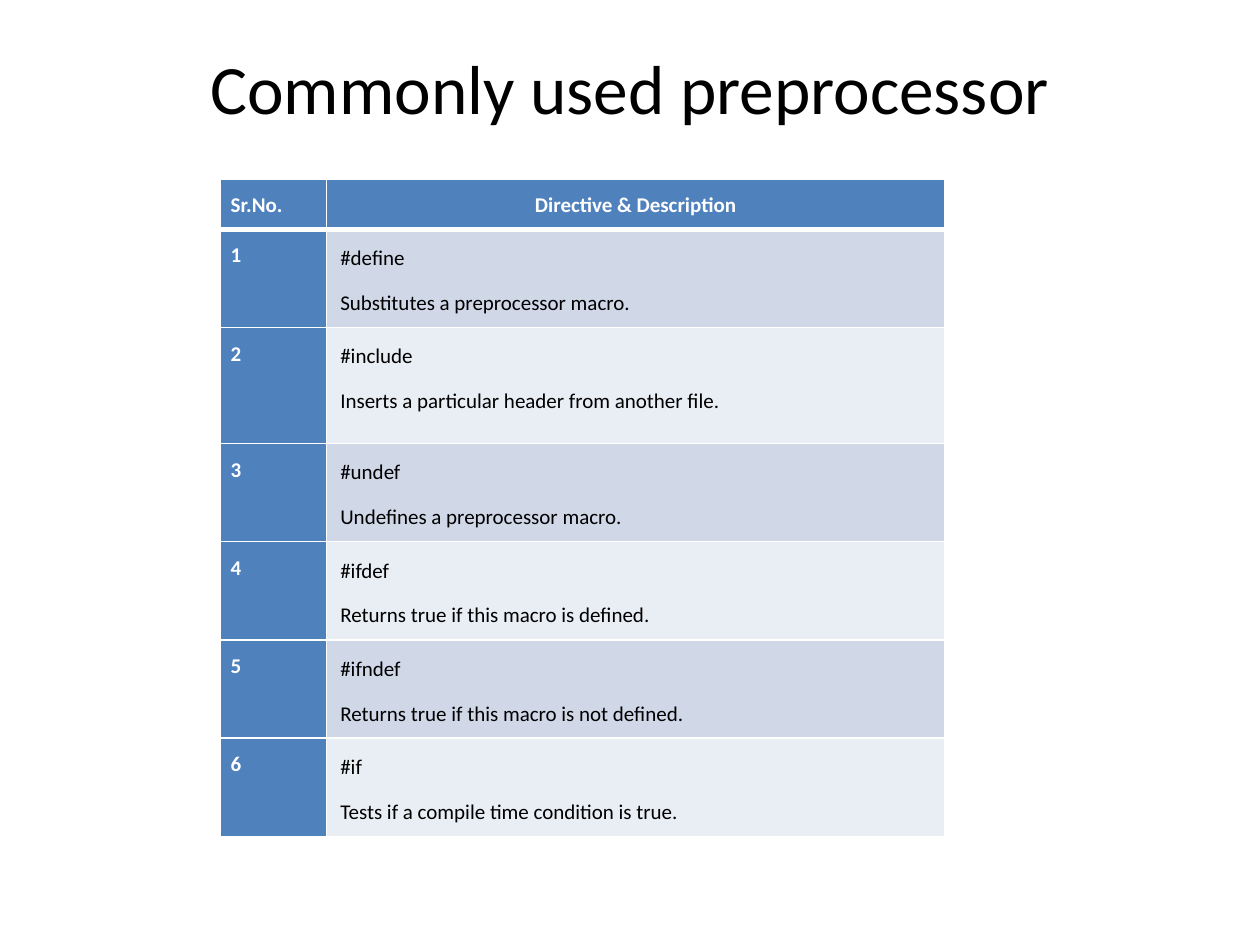
from typing import NamedTuple

from lxml.etree import SubElement
from pptx import Presentation
from pptx.dml.color import RGBColor
from pptx.enum.text import MSO_ANCHOR, PP_ALIGN
from pptx.oxml.ns import qn
from pptx.util import Cm, Pt

BLACK = RGBColor(0x00, 0x00, 0x00)
WHITE = RGBColor(0xFF, 0xFF, 0xFF)
BLUE = RGBColor(0x4F, 0x81, 0xBD)
BANDS = (RGBColor(0xD0, 0xD8, 0xE8), RGBColor(0xE9, 0xED, 0xF4))
FONT = "Calibri"
COLUMN_WIDTHS = (Cm(2.13), Cm(12.47))
HEADER_HEIGHT, ROW_HEIGHT, INCLUDE_HEIGHT = Cm(1.01), Cm(1.98), Cm(2.34)


class Directive(NamedTuple):
    name: str
    description: str
    height: int = ROW_HEIGHT


DIRECTIVES = (
    Directive("#define", "Substitutes a preprocessor macro."),
    Directive("#include", "Inserts a particular header from another file.", INCLUDE_HEIGHT),
    Directive("#undef", "Undefines a preprocessor macro."),
    Directive("#ifdef", "Returns true if this macro is defined."),
    Directive("#ifndef", "Returns true if this macro is not defined."),
    Directive("#if", "Tests if a compile time condition is true."),
)


def write(tf, *lines: str, size=12, color=BLACK, bold=False, align=PP_ALIGN.LEFT,
          spacing=None, after=0, indent=0) -> None:
    """Write one paragraph per line, all in the same format."""
    for i, line in enumerate(lines):
        p = tf.add_paragraph() if i else tf.paragraphs[0]
        p.alignment = align
        p.line_spacing = spacing
        p.space_after = Pt(after)
        if indent:
            p._p.get_or_add_pPr().set("marL", str(indent))
        r = p.add_run()
        r.text = line
        r.font.name = FONT
        r.font.size = Pt(size)
        r.font.bold = bold
        r.font.color.rgb = color


def style_cell(cell, fill: RGBColor, bottom: float = 1, top: float = 1) -> None:
    """Set margins, fill and white borders of a cell."""
    cell.margin_left = cell.margin_right = Cm(0.2)
    cell.margin_top = cell.margin_bottom = Cm(0.2)
    cell.fill.solid()
    cell.fill.fore_color.rgb = fill
    tcPr = cell._tc.get_or_add_tcPr()
    borders = (("a:lnL", 1), ("a:lnR", 1), ("a:lnT", top), ("a:lnB", bottom))
    for i, (tag, width) in enumerate(borders):
        ln = SubElement(tcPr, qn(tag), w=str(Pt(width)))
        solid = SubElement(ln, qn("a:solidFill"))
        SubElement(solid, qn("a:srgbClr"), val=str(WHITE))
        tcPr.insert(i, ln)  # borders come before the fill


def add_title(s, text: str) -> None:
    sp = s.shapes.add_textbox(Cm(1.27), Cm(0.76), Cm(22.86), Cm(1.98))
    tf = sp.text_frame
    tf.word_wrap = True
    tf.vertical_anchor = MSO_ANCHOR.MIDDLE
    write(tf, text, size=39.6, align=PP_ALIGN.CENTER)


def add_directive_table(s) -> None:
    heights = [HEADER_HEIGHT] + [d.height for d in DIRECTIVES]
    table = s.shapes.add_table(len(heights), len(COLUMN_WIDTHS), Cm(4.45), Cm(3.61),
                               sum(COLUMN_WIDTHS), sum(heights)).table
    table.first_col = True
    for column, width in zip(table.columns, COLUMN_WIDTHS):
        column.width = width
    for row, height in zip(table.rows, heights):
        row.height = height

    # Header row
    label = dict(color=WHITE, bold=True, spacing=1.15, after=15.3)
    headings = (("Sr.No.", PP_ALIGN.LEFT), ("Directive & Description", PP_ALIGN.CENTER))
    for col, (text, align) in enumerate(headings):
        cell = table.cell(0, col)
        style_cell(cell, BLUE, bottom=3)
        write(cell.text_frame, text, align=align, **label)

    # Numbered directives in alternating bands
    for n, directive in enumerate(DIRECTIVES, start=1):
        top = 3 if n == 1 else 1
        number, body = table.cell(n, 0), table.cell(n, 1)
        style_cell(number, BLUE, top=top)
        write(number.text_frame, str(n), **label)
        style_cell(body, BANDS[(n - 1) % 2], top=top)
        write(body.text_frame, directive.name, directive.description,
              align=PP_ALIGN.JUSTIFY, spacing=Pt(18.4), after=7.2, indent=Cm(0.08))


def main() -> None:
    prs = Presentation()
    prs.slide_width, prs.slide_height = Cm(25.4), Cm(19.05)
    s = prs.slides.add_slide(prs.slide_layouts[6])
    add_title(s, "Commonly used preprocessor")
    add_directive_table(s)
    prs.save("out.pptx")


if __name__ == "__main__":
    main()
